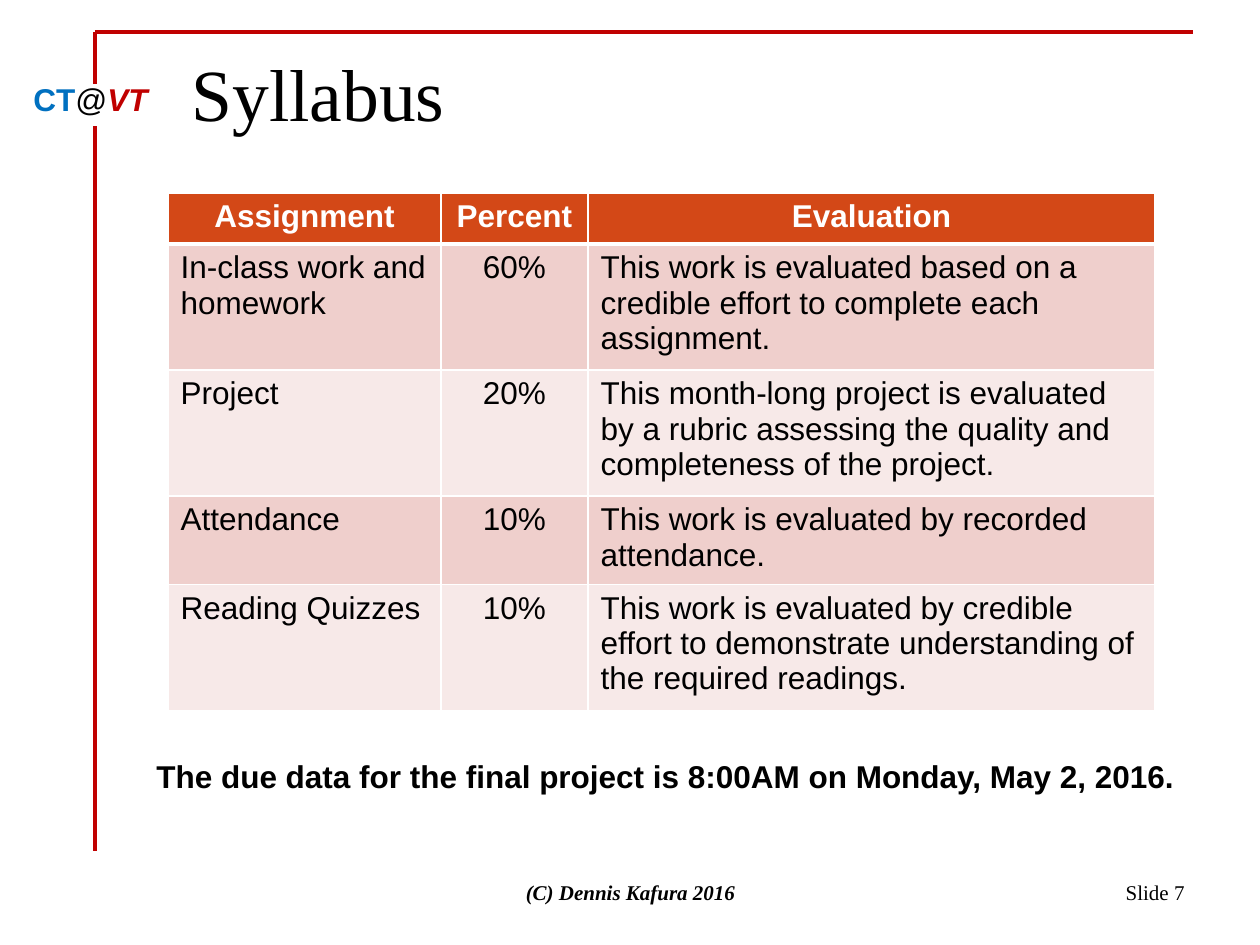
import pptx
import pptx.dml.color
import pptx.enum.shapes
import pptx.enum.text
import pptx.oxml
import pptx.oxml.ns
import pptx.util
from dataclasses import dataclass

ALIGN = pptx.enum.text.PP_ALIGN
ANCHOR = pptx.enum.text.MSO_ANCHOR
SCALE = 914400 / 126


def px(length):
    return pptx.util.Emu(round(length * SCALE))


def rgb(value):
    return pptx.dml.color.RGBColor.from_string(value)


@dataclass(frozen=True)
class Theme:
    sans: str = "Arial"
    serif: str = "Times New Roman"
    black: str = "000000"
    white: str = "FFFFFF"
    red: str = "C00000"
    blue: str = "0070C0"
    header: str = "D34817"
    bands: tuple = ("EFCFCC", "F7E9E8")
    title_size: int = 42
    body_size: int = 18
    footer_size: int = 12


class SlideBuilder:
    def __init__(self, page, theme):
        self.page = page
        self.theme = theme

    def style(self, span, font, size, color, bold=False, italic=False):
        span.font.name = font
        span.font.size = pptx.util.Pt(size)
        span.font.color.rgb = rgb(color)
        span.font.bold = bold
        span.font.italic = italic

    def line(self, x1, y1, x2, y2, width):
        line = self.page.shapes.add_connector(
            pptx.enum.shapes.MSO_CONNECTOR.STRAIGHT, px(x1), px(y1), px(x2), px(y2))
        line.line.color.rgb = rgb(self.theme.red)
        line.line.width = pptx.util.Pt(width)
        properties = line._element.spPr
        properties.append(pptx.oxml.parse_xml(
            f"<a:effectLst {pptx.oxml.ns.nsdecls('a')}/>"))

    def title(self, text, left, top, width, height):
        box = self.page.shapes.title
        box.left, box.top, box.width, box.height = map(px, (left, top, width, height))
        frame = box.text_frame
        frame.text = text
        frame.vertical_anchor = ANCHOR.BOTTOM
        frame.margin_bottom = 0
        frame.auto_size = pptx.enum.text.MSO_AUTO_SIZE.NONE
        para = frame.paragraphs[0]
        para.alignment = ALIGN.LEFT
        self.style(para.runs[0], self.theme.serif, self.theme.title_size, self.theme.black)

    def text(self, spans, left, top, width, height, font, size,
             align=ALIGN.LEFT, anchor=ANCHOR.TOP, wrap=False):
        """Add a text box; each span is (text, color, bold, italic)."""
        box = self.page.shapes.add_textbox(*map(px, (left, top, width, height)))
        frame = box.text_frame
        frame.word_wrap = wrap
        frame.vertical_anchor = anchor
        para = frame.paragraphs[0]
        para.alignment = align
        for text, color, bold, italic in spans:
            span = para.add_run()
            span.text = text
            self.style(span, font, size, color, bold, italic)

    def borders(self, cell, bottom):
        """Draw white cell borders; bottom is the lower border's width in points."""
        properties = cell._tc.get_or_add_tcPr()
        for side, width in (("L", 1), ("R", 1), ("T", 1), ("B", bottom)):
            properties.append(pptx.oxml.parse_xml(
                f"<a:ln{side} {pptx.oxml.ns.nsdecls('a')} w=\"{pptx.util.Pt(width)}\">"
                f"<a:solidFill><a:srgbClr val=\"{self.theme.white}\"/></a:solidFill>"
                f"</a:ln{side}>"))

    def table(self, rows, left, top, widths, heights):
        theme = self.theme
        table = self.page.shapes.add_table(
            len(rows), len(widths), px(left), px(top),
            px(sum(widths)), px(sum(heights))).table
        for column, width in zip(table.columns, widths):
            column.width = px(width)
        for row, height in zip(table.rows, heights):
            row.height = px(height)
        for i, values in enumerate(rows):
            head = i == 0
            for j, value in enumerate(values):
                cell = table.cell(i, j)
                self.borders(cell, 3 if head else 1)
                cell.fill.solid()
                cell.fill.fore_color.rgb = rgb(
                    theme.header if head else theme.bands[(i - 1) % 2])
                cell.text_frame.text = value
                para = cell.text_frame.paragraphs[0]
                para.alignment = ALIGN.CENTER if head or j == 1 else ALIGN.LEFT
                self.style(para.runs[0], theme.sans, theme.body_size,
                           theme.white if head else theme.black, bold=head)


ROWS = [
    ("Assignment", "Percent", "Evaluation"),
    ("In-class work and homework", "60%",
     "This work is evaluated based on a credible effort to complete each assignment."),
    ("Project", "20%",
     "This month-long project is evaluated by a rubric assessing the quality and "
     "completeness of the project."),
    ("Attendance", "10%", "This work is evaluated by recorded attendance."),
    ("Reading Quizzes", "10%",
     "This work is evaluated by credible effort to demonstrate understanding of "
     "the required readings."),
]


def main():
    deck = pptx.Presentation()
    deck.slide_width, deck.slide_height = px(1260), px(945)
    theme = Theme()
    slide = SlideBuilder(deck.slides.add_slide(deck.slide_layouts[5]), theme)

    slide.line(95, 32, 1193, 32, 2)
    slide.line(95, 32, 95, 84, 1.75)
    slide.line(95, 126, 95, 851, 1.75)
    slide.text([("CT", theme.blue, True, False), ("@", theme.black, False, False),
                ("VT", theme.red, True, True)],
               21, 74, 141, 50, theme.sans, theme.body_size)
    slide.title("Syllabus", 179, 38, 1018, 98)
    slide.table(ROWS, 168, 193, (273, 147, 567), (51, 118, 118, 83, 118))
    slide.text([("The due data for the final project is 8:00AM on Monday, May 2, 2016.",
                 theme.black, True, False)],
               144, 751, 1053, 50, theme.sans, theme.body_size)
    slide.text([("(C) Dennis Kafura 2016", theme.black, True, True)],
               431, 861, 399, 63, theme.serif, theme.footer_size,
               ALIGN.CENTER, ANCHOR.MIDDLE, wrap=True)
    slide.text([("Slide 7", theme.black, False, False)],
               903, 861, 294, 63, theme.serif, theme.footer_size,
               ALIGN.RIGHT, ANCHOR.MIDDLE, wrap=True)
    deck.save("out.pptx")


if __name__ == "__main__":
    main()
